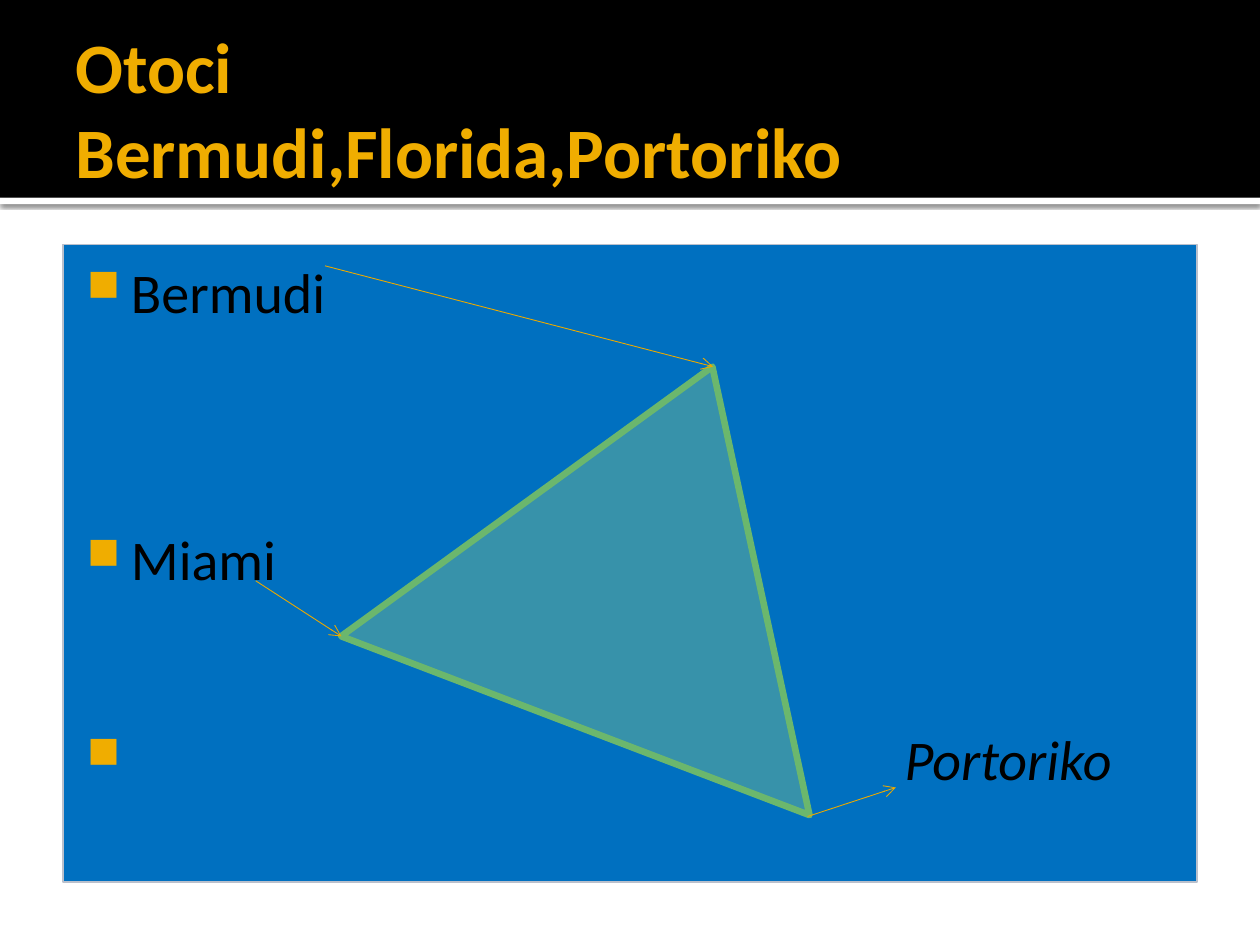
from dataclasses import dataclass

from lxml import etree
from pptx import Presentation
from pptx import util as u
from pptx.dml.color import RGBColor
from pptx.enum import shapes, text
from pptx.oxml.ns import qn


@dataclass(frozen=True)
class Theme:
    font: str = "Calibri"
    head: float = 40.5
    body: float = 32
    black: str = "000000"
    white: str = "FFFFFF"
    gold: str = "F0AD00"
    sea: str = "0070C0"
    edge: str = "BAC0CC"
    teal: str = "3792AA"
    green: str = "6BB76D"
    arrow: str = "EBA900"


theme = Theme()
deck = Presentation()
deck.slide_width, deck.slide_height = u.Inches(10), u.Inches(7.5)
slide = deck.slides.add_slide(deck.slide_layouts[6])
cell = deck.slide_width / 100  # grid of 100 columns by 75 rows


def grid(*spans):
    return [round(span * cell) for span in spans]


def block(kind, place, fill, line=None, width=0):
    """Add a filled preset shape without shadow, at (column, row, columns, rows)."""
    shape = slide.shapes.add_shape(kind, *grid(*place))
    shape.shadow.inherit = False
    shape.fill.solid()
    shape.fill.fore_color.rgb = RGBColor.from_string(fill)
    if line:
        shape.line.color.rgb = RGBColor.from_string(line)
        shape.line.width = u.Pt(width)
    else:
        shape.line.fill.background()
    return shape


kinds = shapes.MSO_SHAPE

# Header band, with a white strip that casts a soft shadow
strip = block(kinds.RECTANGLE, (0, 15.7, 100, 0.5), theme.white)
effect = strip._element.spPr.find(qn("a:effectLst"))
shade = etree.SubElement(effect, qn("a:outerShdw"), blurRad=str(u.Pt(2.5)),
                         dist=str(u.Pt(0.8)), dir="5400000", rotWithShape="0")
tint = etree.SubElement(shade, qn("a:srgbClr"), val=theme.black)
etree.SubElement(tint, qn("a:alpha"), val="60000")
block(kinds.RECTANGLE, (0, 0, 100, 15.7), theme.black)

# Title
title = slide.shapes.add_textbox(*grid(5, 1.7, 90, 13.7)).text_frame
title.word_wrap = True
title.vertical_anchor = text.MSO_ANCHOR.MIDDLE
title.margin_left, title.margin_right = grid(1, 0.5)
title.text = "Otoci \vBermudi,Florida,Portoriko"
para = title.paragraphs[0]
para.font.name, para.font.size, para.font.bold = theme.font, u.Pt(theme.head), True
para.font.color.rgb = RGBColor.from_string(theme.gold)

# Sea panel with the three place names: name, text column, space before, italic
panel = block(kinds.RECTANGLE, (5, 19.4, 90, 50.6), theme.sea, theme.edge, 0.75)
frame = panel.text_frame
frame.word_wrap = True
frame.vertical_anchor = text.MSO_ANCHOR.TOP
frame.margin_left, frame.margin_top, frame.margin_right, frame.margin_bottom = grid(0.6, 1, 1, 0.5)
mark = 1.3
names = [("Bermudi", 4.8, 0, False), ("Miami", 4.8, 114.6, False), ("Portoriko", 66.2, 75.8, True)]
for row, (name, col, gap, slant) in enumerate(names):
    para = frame.add_paragraph() if row else frame.paragraphs[0]
    para.text = name
    para.alignment = text.PP_ALIGN.LEFT
    para.space_before = u.Pt(gap)
    para.font.name, para.font.size, para.font.italic = theme.font, u.Pt(theme.body), slant
    para.font.color.rgb = RGBColor.from_string(theme.black)
    props = para._p.get_or_add_pPr()
    left, hang = grid(col, mark - col)
    props.set("marL", str(left))
    props.set("indent", str(hang))
    rest = props.find(qn("a:defRPr"))
    color = etree.Element(qn("a:buClr"))
    etree.SubElement(color, qn("a:srgbClr"), val=theme.gold)
    size = etree.Element(qn("a:buSzPct"), val="80000")
    sign = etree.Element(qn("a:buChar"), char="■")
    for item in (color, size, sign):
        rest.addprevious(item)

# Triangle between the three places
area = block(kinds.ISOSCELES_TRIANGLE, (31.2, 28.1, 39.8, 30.5), theme.teal, theme.green, 3.78)
area.rotation = 20.9

# Arrows between names and corners
for ends in [(25.8, 21.1, 56.6, 29.1), (20.3, 46.1, 27.1, 50.5), (64.1, 64.8, 71.1, 62.5)]:
    arrow = slide.shapes.add_connector(shapes.MSO_CONNECTOR.STRAIGHT, *grid(*ends))
    arrow.line.color.rgb = RGBColor.from_string(theme.arrow)
    arrow.line.width = u.Pt(0.5)
    etree.SubElement(arrow.line._get_or_add_ln(), qn("a:tailEnd"), type="arrow")
    etree.SubElement(arrow._element.spPr, qn("a:effectLst"))

deck.save("out.pptx")
